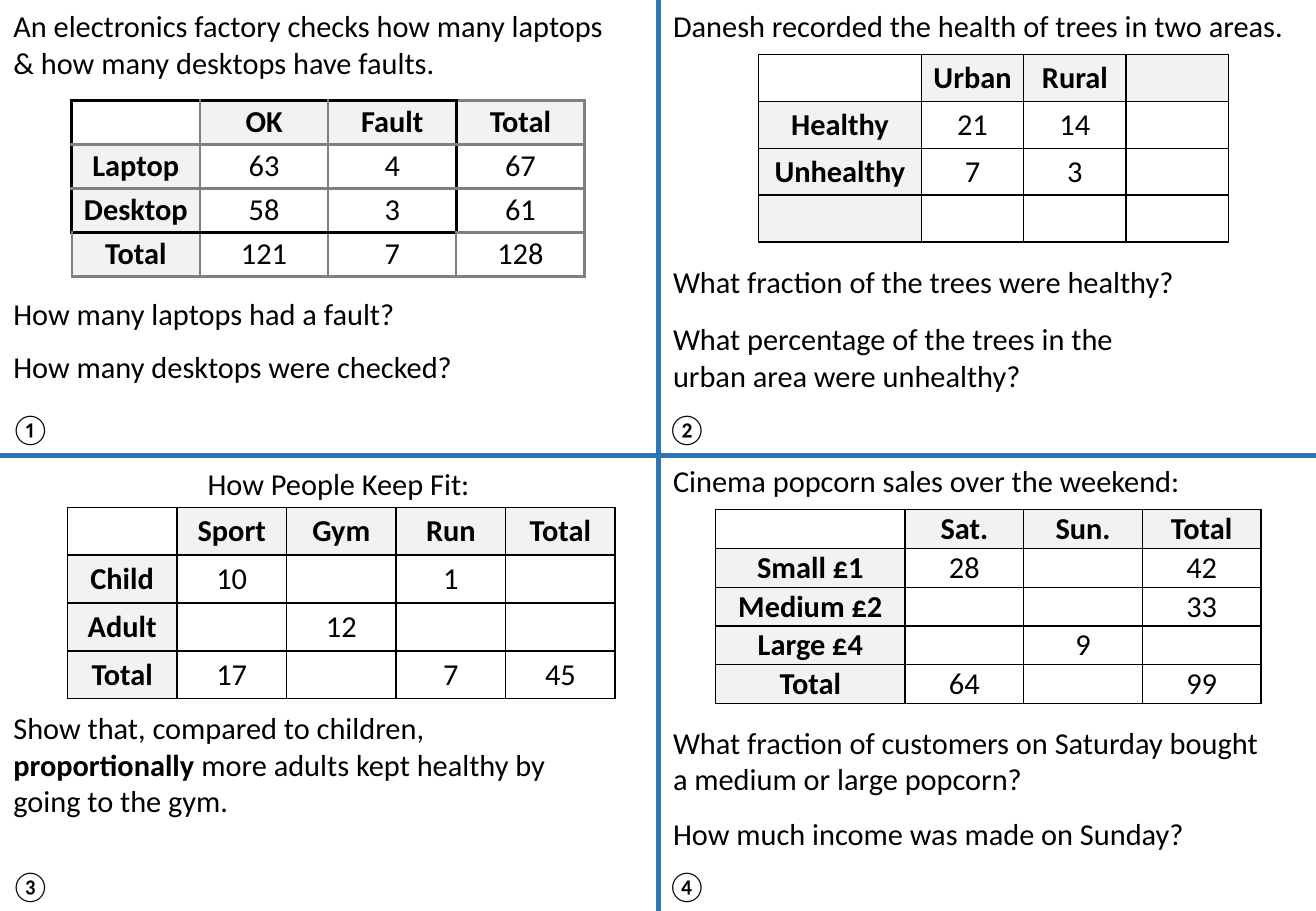
import dataclasses

import lxml.etree
import pptx
import pptx.dml.color
import pptx.enum.shapes
import pptx.enum.text
import pptx.oxml
import pptx.oxml.ns
import pptx.util

Cm = pptx.util.Cm
Pt = pptx.util.Pt


@dataclasses.dataclass(frozen=True)
class Theme:
    font: str = "Calibri"
    size: float = 18
    ink: str = "000000"
    grey: str = "808080"
    header: str = "F2F2F2"
    paper: str = "FFFFFF"
    divider: str = "2E75B6"
    divider_width: float = 3
    thin: float = 1
    medium: float = 1.5
    thick: float = 2.25


def colour(value):
    return pptx.dml.color.RGBColor.from_string(value)


class Worksheet:
    def __init__(self, theme, slide):
        self.theme = theme
        self.slide = slide

    def format_run(self, run, bold=False):
        run.font.name = self.theme.font
        run.font.size = Pt(self.theme.size)
        run.font.color.rgb = colour(self.theme.ink)
        run.font.bold = bold

    def divider(self, left, top, right, bottom):
        line = self.slide.shapes.add_connector(
            pptx.enum.shapes.MSO_CONNECTOR.STRAIGHT, Cm(left), Cm(top), Cm(right), Cm(bottom))
        line.line.color.rgb = colour(self.theme.divider)
        line.line.width = Pt(self.theme.divider_width)
        properties = line._element.spPr
        lxml.etree.SubElement(properties, pptx.oxml.ns.qn("a:effectLst"))

    def text(self, left, top, width, height, lines, bold_word=None):
        box = self.slide.shapes.add_textbox(Cm(left), Cm(top), Cm(width), Cm(height))
        frame = box.text_frame
        frame.text = "\n".join(lines)
        frame.word_wrap = False
        frame.auto_size = pptx.enum.text.MSO_AUTO_SIZE.SHAPE_TO_FIT_TEXT
        for paragraph in frame.paragraphs:
            if bold_word and paragraph.text.startswith(bold_word):
                rest = paragraph.text[len(bold_word):]
                paragraph.text = bold_word
                paragraph.add_run().text = rest
            for run in paragraph.runs:
                self.format_run(run, run.text == bold_word)

    def border(self, cell, side, line_colour, width):
        properties = cell._tc.get_or_add_tcPr()
        properties.append(pptx.oxml.parse_xml(
            f'<a:ln{side} {pptx.oxml.ns.nsdecls("a")} w="{Pt(width)}">'
            f'<a:solidFill><a:srgbClr val="{line_colour}"/></a:solidFill></a:ln{side}>'))

    def cell_borders(self, cell, row, column, boxed):
        theme = self.theme
        if not boxed:
            heavy = {side: False for side in "LRTB"}
            normal = (theme.ink, theme.thin)
        else:
            heavy = {
                "L": row < 3 and column in (0, 3),
                "R": row < 3 and column == 2,
                "T": column < 3 and row in (0, 3),
                "B": column < 3 and row == 2,
            }
            normal = (theme.grey, theme.medium)
        for side, is_heavy in heavy.items():
            self.border(cell, side, *((theme.ink, theme.thick) if is_heavy else normal))

    def table(self, left, top, column_widths, row_height, rows, boxed=False):
        frame = self.slide.shapes.add_table(
            len(rows), len(column_widths), Cm(left), Cm(top),
            Cm(sum(column_widths)), Cm(row_height * len(rows)))
        table = frame.table
        table.first_row = False
        table.horz_banding = False
        for column, width in zip(table.columns, column_widths):
            column.width = Cm(width)
        for row_index, values in enumerate(rows):
            table.rows[row_index].height = Cm(row_height)
            for column_index, value in enumerate(values):
                cell = table.cell(row_index, column_index)
                is_corner = row_index == column_index == 0
                is_header = not is_corner and 0 in (row_index, column_index)
                self.cell_borders(cell, row_index, column_index, boxed)
                cell.fill.solid()
                cell.fill.fore_color.rgb = colour(self.theme.header if is_header else self.theme.paper)
                cell.margin_left = cell.margin_right = cell.margin_top = cell.margin_bottom = 0
                cell.vertical_anchor = pptx.enum.text.MSO_ANCHOR.MIDDLE
                if value:
                    cell.text_frame.text = value
                    paragraph = cell.text_frame.paragraphs[0]
                    paragraph.alignment = pptx.enum.text.PP_ALIGN.CENTER
                    self.format_run(paragraph.runs[0], is_header)


def main():
    presentation = pptx.Presentation()
    presentation.slide_width = Cm(27.51)
    presentation.slide_height = Cm(19.05)
    slide = presentation.slides.add_slide(presentation.slide_layouts[6])
    sheet = Worksheet(Theme(), slide)

    middle_x, middle_y = 13.76, 9.53
    sheet.divider(middle_x, 0, middle_x, 19.05)
    sheet.divider(27.51, middle_y, 0, middle_y)

    left, right = 0.03, 13.82
    one_line, two_lines, three_lines = 1.03, 1.8, 2.56

    for index, number in enumerate("①②③④"):
        row, column = divmod(index, 2)
        sheet.text(-0.03 + 13.72 * column, 8.46 + 9.55 * row, 1.37, one_line, [number])

    sheet.text(left, 0.03, 12.98, two_lines, [
        "An electronics factory checks how many laptops",
        "& how many desktops have faults."])
    sheet.table(1.5, 2.1, [2.68] * 4, 0.92, [
        ["", "OK", "Fault", "Total"],
        ["Laptop", "63", "4", "67"],
        ["Desktop", "58", "3", "61"],
        ["Total", "121", "7", "128"]], boxed=True)
    sheet.text(left, 6.05, 8.59, one_line, ["How many laptops had a fault?"])
    sheet.text(left, 7.16, 9.8, one_line, ["How many desktops were checked?"])

    sheet.text(right, 0.03, 13.44, one_line, ["Danesh recorded the health of trees in two areas."])
    sheet.table(15.86, 1.14, [3.4] + [2.14] * 3, 0.98, [
        ["", "Urban", "Rural", ""],
        ["Healthy", "21", "14", ""],
        ["Unhealthy", "7", "3", ""],
        ["", "", "", ""]])
    sheet.text(right, 5.38, 11.13, one_line, ["What fraction of the trees were healthy?"])
    sheet.text(right, 6.58, 9.83, two_lines, [
        "What percentage of the trees in the",
        "urban area were unhealthy?"])

    sheet.text(4.09, 9.6, 6.07, one_line, ["How People Keep Fit:"])
    sheet.table(1.41, 10.61, [2.29] * 5, 1, [
        ["", "Sport", "Gym", "Run", "Total"],
        ["Child", "10", "", "1", ""],
        ["Adult", "", "12", "", ""],
        ["Total", "17", "", "7", "45"]])
    sheet.text(left, 14.71, 11.73, three_lines, [
        "Show that, compared to children,",
        "proportionally more adults kept healthy by",
        "going to the gym."], bold_word="proportionally")

    sheet.text(right, 9.55, 11.23, one_line, ["Cinema popcorn sales over the weekend:"])
    sheet.table(14.96, 10.66, [3.96] + [2.48] * 3, 0.81, [
        ["", "Sat.", "Sun.", "Total"],
        ["Small £1", "28", "", "42"],
        ["Medium £2", "", "", "33"],
        ["Large £4", "", "9", ""],
        ["Total", "64", "", "99"]])
    sheet.text(right, 15.01, 12.9, two_lines, [
        "What fraction of customers on Saturday bought",
        "a medium or large popcorn?"])
    sheet.text(right, 16.92, 11.33, one_line, ["How much income was made on Sunday?"])

    presentation.save("out.pptx")


if __name__ == "__main__":
    main()
